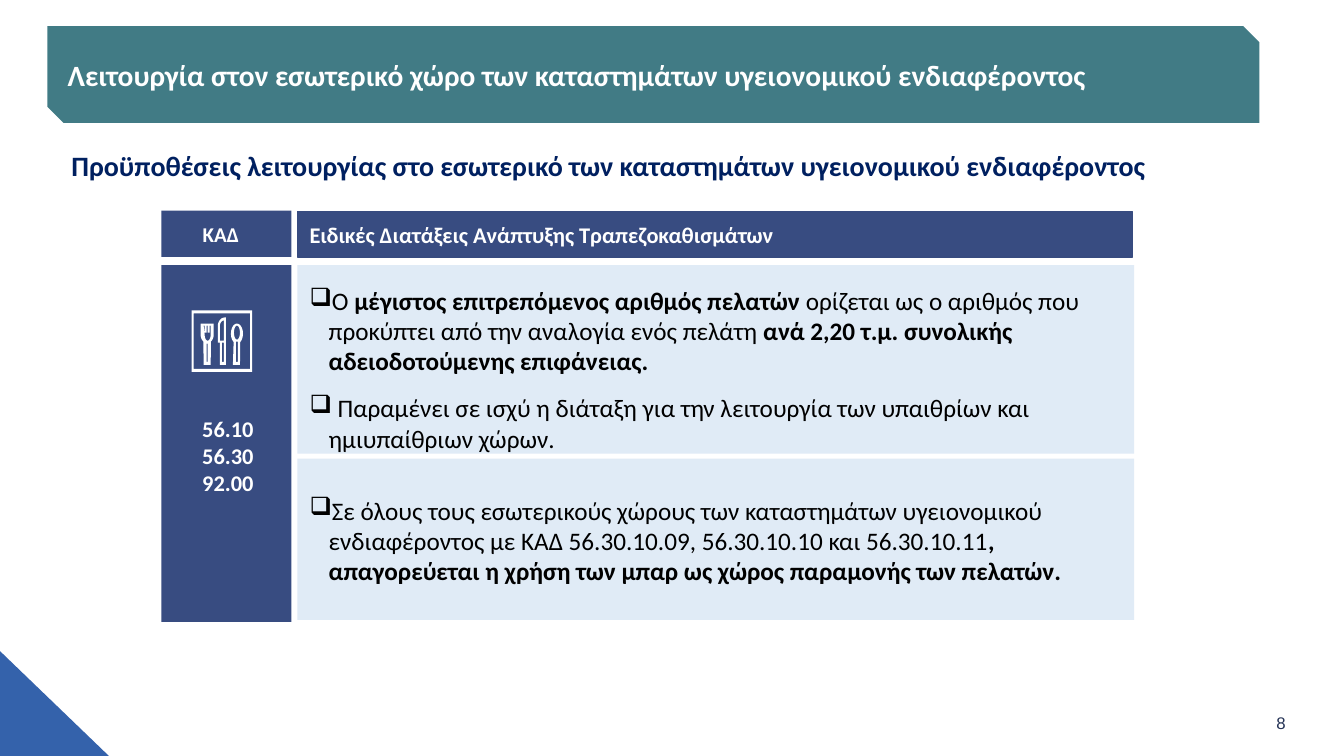
from dataclasses import dataclass
from math import cos, radians, sin

from lxml import etree
from pptx import Presentation
from pptx.dml.color import RGBColor
from pptx.enum.shapes import MSO_SHAPE as Shape
from pptx.enum.text import MSO_ANCHOR as Anchor, PP_ALIGN as Align
from pptx.oxml.ns import qn
from pptx.util import Inches, Pt


@dataclass(frozen=True)
class Theme:
    font: str = "Calibri"
    number_font: str = "Arial"
    teal: str = "417B85"
    navy: str = "384C81"
    navy_edge: str = "374B7F"
    pale: str = "E0EBF6"
    corner: str = "3462AB"
    heading: str = "002060"
    number: str = "253356"
    white: str = "FFFFFF"
    black: str = "000000"
    title_size: float = 21
    heading_size: float = 20
    body_size: float = 18
    label_size: float = 16
    code_size: float = 15
    number_size: float = 12


class SlideBuilder:
    def __init__(self, slide, theme):
        self.slide = slide
        self.theme = theme

    def block(self, kind, box, fill, edge=None):
        shape = self.slide.shapes.add_shape(kind, *map(Inches, box))
        self.paint(shape, fill, edge)
        return shape

    def paint(self, shape, fill, edge=None):
        shape.shadow.inherit = False
        shape.fill.solid()
        shape.fill.fore_color.rgb = RGBColor.from_string(fill)
        if edge:
            shape.line.color.rgb = RGBColor.from_string(edge)
            shape.line.width = Pt(1)
        else:
            shape.line.fill.background()

    def text_box(self, box):
        return self.slide.shapes.add_textbox(*map(Inches, box))

    def add_text(self, shape, paragraphs, size, color, font=None, align=Align.LEFT,
                 anchor=Anchor.MIDDLE, insets=(0.1, 0.05, 0.1, 0.05), gap=0, bullet=None):
        """Fill a shape; each paragraph is a list of (text, bold) runs."""
        frame = shape.text_frame
        frame.word_wrap = True
        frame.vertical_anchor = anchor
        (frame.margin_left, frame.margin_top,
         frame.margin_right, frame.margin_bottom) = map(Inches, insets)
        for index, runs in enumerate(paragraphs):
            paragraph = frame.add_paragraph() if index else frame.paragraphs[0]
            paragraph.alignment = align
            if index:
                paragraph.space_before = Pt(gap)
            if bullet:
                self.add_bullet(paragraph, bullet)
            for text, bold in runs:
                run = paragraph.add_run()
                run.text = text
                run.font.name = font or self.theme.font
                run.font.size = Pt(size)
                run.font.bold = bold
                run.font.color.rgb = RGBColor.from_string(color)

    def add_bullet(self, paragraph, mark):
        properties = paragraph._p.get_or_add_pPr()
        properties.set("marL", str(Inches(0.19)))
        properties.set("indent", str(Inches(-0.19)))
        etree.SubElement(properties, qn("a:buChar")).set("char", mark)

    def rules_panel(self, box, rules, **layout):
        panel = self.block(Shape.RECTANGLE, box, self.theme.pale)
        self.add_text(panel, rules, self.theme.body_size, self.theme.black,
                      gap=12, bullet="❑", **layout)

    def icon(self, pieces):
        """Group pieces, each an outline followed by the holes cut from it."""
        group = self.slide.shapes.add_group_shape()
        for contours in pieces:
            outline = None
            for contour in contours:
                start, *rest = [(Inches(x), Inches(y)) for x, y in contour]
                if outline is None:
                    outline = group.shapes.build_freeform(*start, scale=1.0)
                else:
                    outline.move_to(*start)
                outline.add_line_segments(rest, close=True)
            self.paint(outline.convert_to_shape(), self.theme.white)


def arc(cx, cy, rx, ry, start, end, steps=16):
    """Points on an ellipse, with angles in degrees clockwise from the right."""
    angles = [radians(start + (end - start) * i / steps) for i in range(steps + 1)]
    return [(cx + rx * cos(a), cy + ry * sin(a)) for a in angles]


def bar(left, top, right, bottom):
    return [(left, top), (right, top), (right, bottom), (left, bottom)]


def cutlery():
    frame = [bar(1.9, 3.08, 2.5, 3.69), bar(1.92, 3.11, 2.48, 3.66)]
    spoon = [
        arc(2.35, 3.31, 0.06, 0.1, 57, -237) + [(2.31, 3.62), (2.38, 3.62)],
        arc(2.35, 3.3, 0.03, 0.07, 0, 360),
        bar(2.34, 3.39, 2.36, 3.59),
    ]
    knife = [
        arc(2.23, 3.24, 0.07, 0.09, 180, 270)
        + [(2.24, 3.15), (2.24, 3.62), (2.18, 3.62), (2.18, 3.4), (2.16, 3.4)],
        arc(2.22, 3.24, 0.04, 0.06, 180, 270) + [(2.22, 3.38), (2.18, 3.38)],
        bar(2.2, 3.4, 2.22, 3.59),
    ]
    tines = [(2.02, 3.23), (2.03, 3.23), (2.03, 3.3), (2.05, 3.3), (2.05, 3.23),
             (2.06, 3.23), (2.06, 3.3), (2.08, 3.3), (2.08, 3.23), (2.09, 3.23)]
    fork = [
        [(1.99, 3.21), (2.12, 3.21)] + arc(2.06, 3.32, 0.06, 0.08, 0, 57)
        + [(2.09, 3.62), (2.02, 3.62)] + arc(2.05, 3.32, 0.06, 0.08, 123, 180),
        bar(2.05, 3.41, 2.06, 3.59),
        tines + arc(2.06, 3.32, 0.03, 0.06, 0, 180),
    ]
    return [frame, spoon, knife, fork]


def main():
    deck = Presentation()
    deck.slide_width, deck.slide_height = Inches(13.33), Inches(7.5)
    theme = Theme()
    page = SlideBuilder(deck.slides.add_slide(deck.slide_layouts[6]), theme)

    page.block(Shape.RIGHT_TRIANGLE, (0, 6.46, 1.08, 1.04), theme.corner)
    page.add_text(page.text_box((10.92, 7.1, 1.93, 0.15)), [[("8", False)]],
                  theme.number_size, theme.number, font=theme.number_font,
                  align=Align.RIGHT, insets=(0.1, 0, 0.1, 0))

    banner = page.block(Shape.SNIP_2_DIAG_RECTANGLE, (0.47, 0.26, 12.02, 0.96), theme.teal)
    page.add_text(banner, [[("Λειτουργία στον εσωτερικό χώρο των καταστημάτων "
                             "υγειονομικού ενδιαφέροντος", True)]],
                  theme.title_size, theme.white, insets=(0.12, 0.02, 0.12, 0.02))
    page.add_text(page.text_box((0.61, 1.42, 11.73, 0.44)),
                  [[("Προϋποθέσεις λειτουργίας στο εσωτερικό των καταστημάτων "
                     "υγειονομικού ενδιαφέροντος", True)]],
                  theme.heading_size, theme.heading, anchor=Anchor.TOP)

    code_header = page.block(Shape.RECTANGLE, (1.6, 2.09, 1.29, 0.46), theme.navy)
    page.add_text(code_header, [[("ΚΑΔ", True)]], theme.code_size, theme.white,
                  insets=(0.41, 0.06, 0.06, 0.06))
    rules_header = page.block(Shape.RECTANGLE, (2.95, 2.1, 8.28, 0.45),
                              theme.navy, theme.navy_edge)
    page.add_text(rules_header, [[("Ειδικές Διατάξεις Ανάπτυξης Τραπεζοκαθισμάτων", True)]],
                  theme.label_size, theme.white, insets=(0.12, 0.06, 0.08, 0.06))

    codes = page.block(Shape.RECTANGLE, (1.6, 2.63, 1.29, 3.54), theme.navy)
    page.add_text(codes, [[(code, True)] for code in ("56.10", "56.30", "92.00")],
                  theme.label_size, theme.white, align=Align.CENTER,
                  insets=(0.09, 0.3, 0.06, 0.06))
    page.icon(cutlery())

    page.rules_panel((2.95, 4.55, 8.3, 1.6), [[
        ("Σε όλους τους εσωτερικούς χώρους των καταστημάτων υγειονομικού ενδιαφέροντος "
         "με ΚΑΔ 56.30.10.09, 56.30.10.10 και 56.30.10.11", False),
        (", απαγορεύεται η χρήση των μπαρ ως χώρος παραμονής των πελατών.", True),
    ]], insets=(0.12, 0.08, 0.08, 0.06))
    page.rules_panel((2.95, 2.63, 8.3, 1.87), [
        [("Ο ", False),
         ("μέγιστος επιτρεπόμενος αριθμός πελατών ", True),
         ("ορίζεται ως ο αριθμός που προκύπτει από την αναλογία ενός πελάτη ", False),
         ("ανά 2,20 τ.μ. συνολικής αδειοδοτούμενης επιφάνειας.", True)],
        [(" ", True),
         ("Παραμένει σε ισχύ η διάταξη για την λειτουργία των υπαιθρίων "
          "και ημιυπαίθριων χώρων.", False)],
    ], anchor=Anchor.TOP, insets=(0.12, 0.2, 0.08, 0))

    deck.save("out.pptx")


if __name__ == "__main__":
    main()
